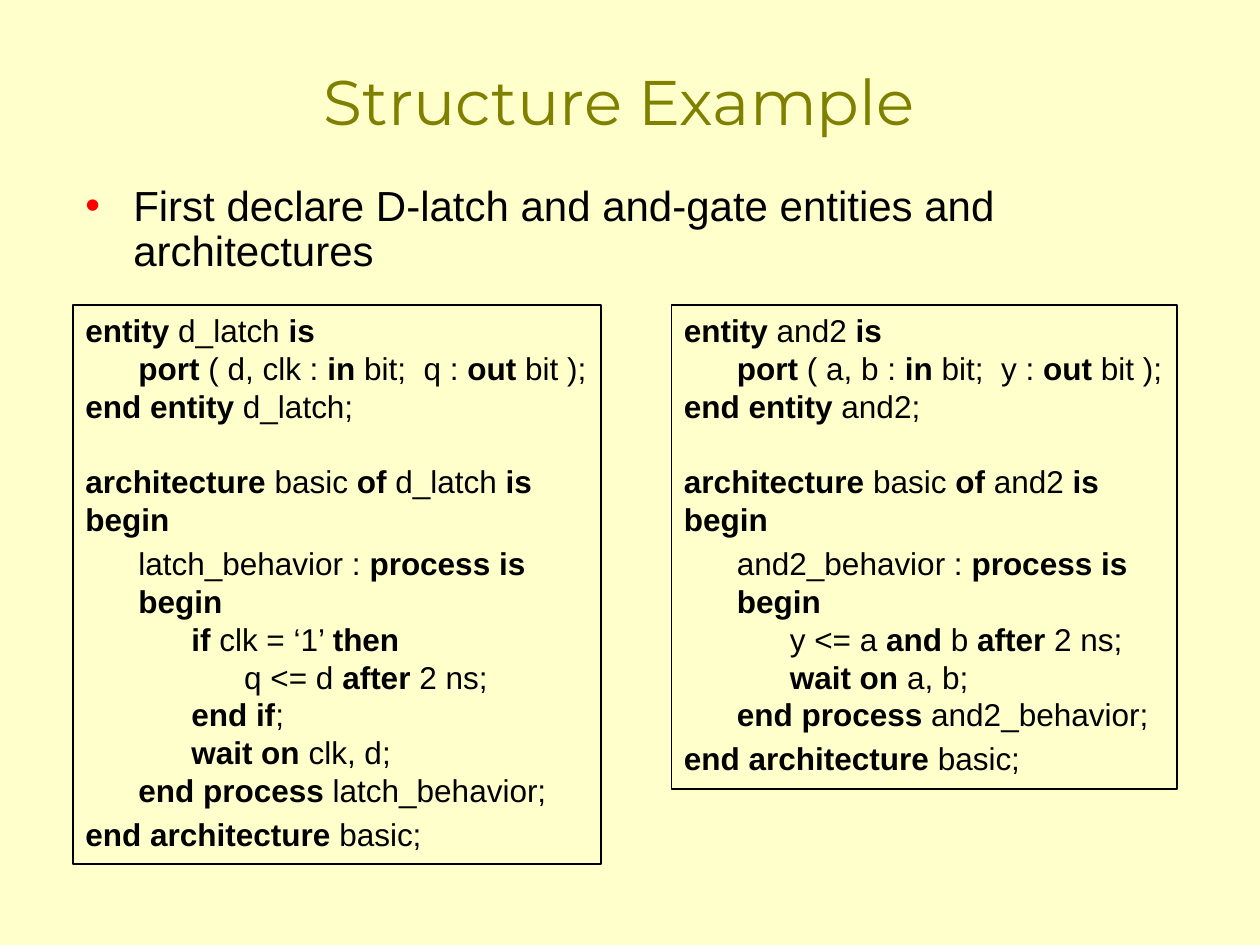
"""Build the Structure Example slide with two VHDL listings."""
import pptx
import pptx.dml.color
import pptx.enum.shapes
import pptx.enum.text
import pptx.oxml
import pptx.oxml.ns
import pptx.util

Inches, Pt = pptx.util.Inches, pptx.util.Pt
RGB = pptx.dml.color.RGBColor.from_string
ANCHOR = pptx.enum.text.MSO_ANCHOR
ALIGN = pptx.enum.text.PP_ALIGN

THEME = {
    "background": RGB("FFFFCC"),
    "line": RGB("000000"),
    "bullet": "FF0000",
    "title": {"name": "Montserrat", "size": Pt(36), "color": RGB("808000")},
    "body": {"name": "Arial", "size": Pt(24), "color": RGB("000000")},
    "code": {"name": "Arial", "size": Pt(18), "color": RGB("000000")},
}
TAB = 0.42
CODE_GAPS = [0, 21.6, 3.6, 3.6]

LATCH = [
    "**entity** d_latch **is\n\tport** ( d, clk : **in** bit;  q : **out** bit );\n"
    "**end entity** d_latch;",
    "**architecture** basic **of** d_latch **is\nbegin**",
    "\tlatch_behavior : **process is\n\tbegin\n\t\tif** clk = ‘1’ **then**\n"
    "\t\t\tq <= d **after** 2 ns;\n\t\t**end if**;\n\t\t**wait on** clk, d;\n"
    "\t**end process** latch_behavior;",
    "**end architecture** basic;",
]
AND_GATE = [
    "**entity** and2 **is\n\tport** ( a, b : **in** bit;  y : **out** bit );\n"
    "**end entity** and2;",
    "**architecture** basic **of** and2 **is\nbegin**",
    "\tand2_behavior : **process is\n\tbegin**\n\t\ty <= a **and** b **after** 2 ns;\n"
    "\t\t**wait on** a, b;\n\t**end process** and2_behavior;",
    "**end architecture** basic;",
]


def style(font, look):
    for key, value in look.items():
        if key == "color":
            font.color.rgb = value
        else:
            setattr(font, key, value)


def add_ppr(p, xml):
    ns = pptx.oxml.ns.nsdecls("a")
    for child in pptx.oxml.parse_xml(f"<a:pPr {ns}>{xml}</a:pPr>"):
        p._p.get_or_add_pPr().append(child)


prs = pptx.Presentation()
prs.slide_width, prs.slide_height = Inches(10), Inches(7.5)
s = prs.slides.add_slide(prs.slide_layouts[6])
s.background.fill.solid()
s.background.fill.fore_color.rgb = THEME["background"]

headings = [
    ("title", "Structure Example", 0.17, 1.25, ANCHOR.MIDDLE, ALIGN.CENTER),
    ("body", "First declare D-latch and and-gate entities and architectures",
     1.42, 0.57, ANCHOR.TOP, ALIGN.LEFT),
]
for role, text, top, height, anchor, align in headings:
    sp = s.shapes.add_textbox(Inches(0.58), Inches(top), Inches(8.67), Inches(height))
    tf = sp.text_frame
    tf.word_wrap, tf.vertical_anchor = True, anchor
    p = tf.paragraphs[0]
    p.alignment = align
    if role == "body":
        p.line_spacing = 0.9
        ppr = p._p.get_or_add_pPr()
        ppr.set("marL", str(Inches(0.38)))
        ppr.set("indent", str(Inches(-0.38)))
        add_ppr(p, f'<a:buClr><a:srgbClr val="{THEME["bullet"]}"/></a:buClr>'
                   '<a:buFont typeface="Arial"/><a:buChar char="•"/>')
    r = p.add_run()
    r.text = text
    style(r.font, THEME[role])

stops = "".join(f'<a:tab pos="{Inches(TAB * n)}" algn="l"/>' for n in (1, 2, 3))
listings = [(LATCH, 0.58, 4.19, 4.44), (AND_GATE, 5.33, 4.01, 3.84)]
for blocks, left, width, height in listings:
    sp = s.shapes.add_shape(pptx.enum.shapes.MSO_SHAPE.RECTANGLE, Inches(left),
                            Inches(2.42), Inches(width), Inches(height))
    sp.shadow.inherit = False
    sp.fill.background()
    sp.line.color.rgb = THEME["line"]
    sp.line.width = Pt(1)
    tf = sp.text_frame
    tf.word_wrap, tf.vertical_anchor = False, ANCHOR.TOP
    tf.auto_size = pptx.enum.text.MSO_AUTO_SIZE.SHAPE_TO_FIT_TEXT
    for i, (block, gap) in enumerate(zip(blocks, CODE_GAPS)):
        p = tf.add_paragraph() if i else tf.paragraphs[0]
        p.alignment = ALIGN.LEFT
        p.space_before = Pt(gap)
        add_ppr(p, f"<a:tabLst>{stops}</a:tabLst>")
        style(p.font, THEME["code"])
        for j, part in enumerate(block.split("**")):
            for k, text in enumerate(part.split("\n")):
                if k:
                    p.add_line_break()
                if text:
                    r = p.add_run()
                    r.text = text
                    style(r.font, THEME["code"] | {"bold": j % 2 == 1})

prs.save("out.pptx")
